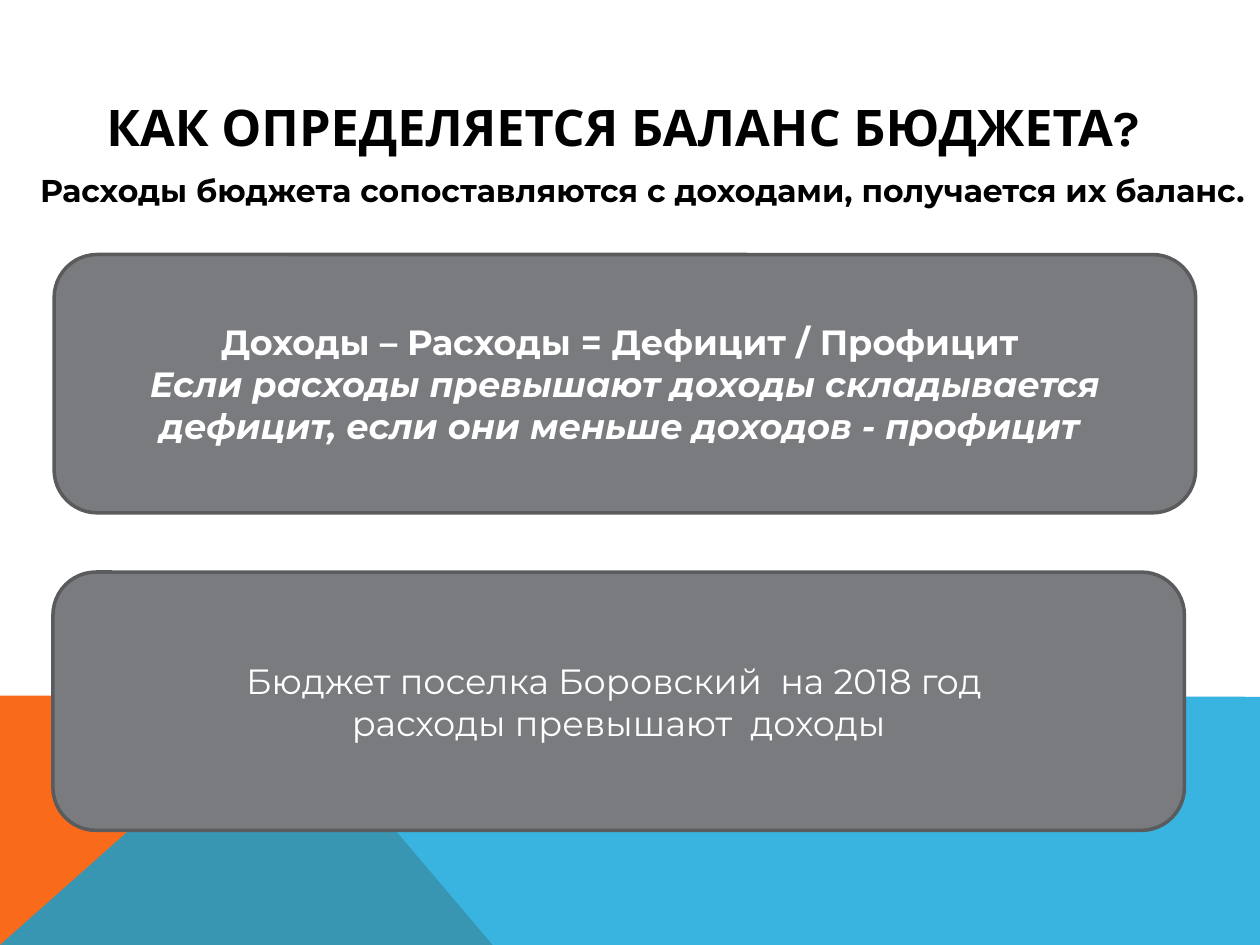
import pptx
import pptx.dml.color
import pptx.enum.shapes
import pptx.enum.text
import pptx.oxml.ns
import pptx.util
from lxml import etree
from pptx.util import Inches

BLACK, WHITE = "000000", "FFFFFF"
ORANGE, BLUE = "F96A1B", "08A1D9"
GRAY, DARK_GRAY = "797B7E", "5A5B5D"


def color(hex_value):
    return pptx.dml.color.RGBColor.from_string(hex_value)


def add_band(slide, points, fill, opacity=100):
    """Draw a borderless polygon through points given in inches."""
    corners = [(Inches(x), Inches(y)) for x, y in points]
    builder = slide.shapes.build_freeform(*corners[0])
    builder.add_line_segments(corners[1:], close=True)
    band = builder.convert_to_shape()
    band.shadow.inherit = False
    band.fill.solid()
    band.fill.fore_color.rgb = color(fill)
    band.line.fill.background()
    if opacity < 100:
        rgb = band.fill._xPr.find(".//" + pptx.oxml.ns.qn("a:srgbClr"))
        etree.SubElement(rgb, pptx.oxml.ns.qn("a:alpha"), val=str(opacity * 1000))


def add_footer(slide, left, top, width, height):
    bottom, right = top + height, left + width
    peak = (left + 2.23, top)
    add_band(slide, [(left, bottom), (left, top), peak, (left + 3.91, bottom)], ORANGE)
    add_band(slide, [(left, bottom), peak, (right, top + 0.01), (right, bottom)],
             BLUE, opacity=80)


def write_lines(frame, lines, size, hex_value, font="Montserrat", anchor="MIDDLE"):
    """Fill a frame with centred paragraphs from (text, bold, italic) lines."""
    frame.word_wrap = True
    frame.vertical_anchor = pptx.enum.text.MSO_ANCHOR[anchor]
    for index, (text, bold, italic) in enumerate(lines):
        paragraph = frame.add_paragraph() if index else frame.paragraphs[0]
        paragraph.text = text
        paragraph.alignment = pptx.enum.text.PP_ALIGN.CENTER
        paragraph.font.name = font
        paragraph.font.size = pptx.util.Pt(size)
        paragraph.font.bold = bold
        paragraph.font.italic = italic
        paragraph.font.color.rgb = color(hex_value)


def add_heading(slide, left, top, width, height, text, size, **style):
    heading = slide.shapes.add_textbox(*map(Inches, (left, top, width, height)))
    write_lines(heading.text_frame, [(text, True, False)], size, BLACK, **style)


def add_card(slide, left, top, width, height, lines):
    card = slide.shapes.add_shape(
        pptx.enum.shapes.MSO_SHAPE.ROUNDED_RECTANGLE,
        *map(Inches, (left, top, width, height)))
    card.shadow.inherit = False
    card.fill.solid()
    card.fill.fore_color.rgb = color(GRAY)
    card.line.color.rgb = color(DARK_GRAY)
    card.line.width = pptx.util.Pt(2)
    write_lines(card.text_frame, lines, 20, WHITE)


def main():
    deck = pptx.Presentation()
    deck.slide_width, deck.slide_height = Inches(10), Inches(7.5)
    slide = deck.slides.add_slide(deck.slide_layouts[6])

    add_footer(slide, 0, 5.52, 10, 1.98)
    add_heading(slide, 0.5, 0.77, 8.99, 0.46,
                "КАК ОПРЕДЕЛЯЕТСЯ БАЛАНС БЮДЖЕТА? ", 28.8, font="Karla")
    add_heading(slide, 0.2, 1.31, 9.8, 0.71,
                "Расходы бюджета сопоставляются с доходами, получается их баланс.",
                18, anchor="TOP")
    add_card(slide, 0.43, 2.02, 9.06, 2.05, [
        ("Доходы – Расходы = Дефицит / Профицит ", True, False),
        ("Если расходы превышают доходы складывается дефицит, "
         "если они меньше доходов - профицит ", True, True),
    ])
    add_card(slide, 0.42, 4.54, 8.98, 2.05, [
        ("Бюджет поселка Боровский  на 2018 год ", False, False),
        ("расходы превышают  доходы", False, False),
    ])
    deck.save("out.pptx")


if __name__ == "__main__":
    main()
